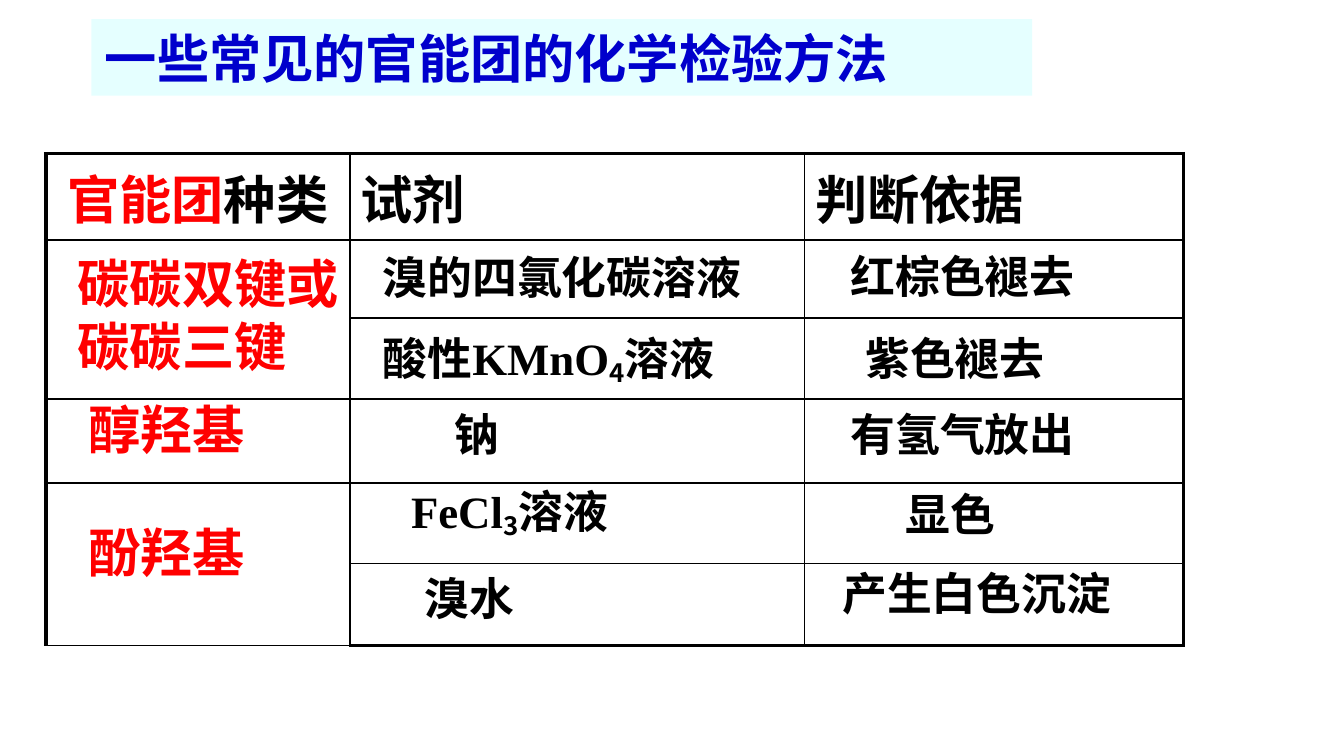
import pptx
import pptx.dml.color
import pptx.enum.text
import pptx.oxml
import pptx.oxml.ns
import pptx.util
from dataclasses import dataclass

Pt = pptx.util.Pt


@dataclass(frozen=True)
class Theme:
    black: str = "000000"
    red: str = "FF0000"
    blue: str = "0000CC"
    banner: str = "E5FFFF"
    large: int = 28
    medium: int = 24
    serif: str = "Times New Roman"
    sans: str = "Calibri"
    chinese: str = "Noto Sans CJK SC"
    outer_line: float = 2.25
    inner_line: float = 1


theme = Theme()


def format_run(run, size, color, font=theme.serif):
    run.font.size = Pt(size)
    run.font.bold = True
    run.font.name = font
    run.font.color.rgb = pptx.dml.color.RGBColor.from_string(color)
    east_asian = pptx.oxml.parse_xml(
        f'<a:ea {pptx.oxml.ns.nsdecls("a")} typeface="{theme.chinese}"/>')
    run.font._element.find(pptx.oxml.ns.qn("a:latin")).addnext(east_asian)


def set_border(cell, side, width):
    """Add one edge line; call in the order L, R, T, B and before the fill."""
    cell._tc.get_or_add_tcPr().append(pptx.oxml.parse_xml(
        f'<a:ln{side} {pptx.oxml.ns.nsdecls("a")} w="{Pt(width)}"><a:solidFill>'
        f'<a:srgbClr val="{theme.black}"/></a:solidFill></a:ln{side}>'))


presentation = pptx.Presentation()
presentation.slide_width, presentation.slide_height = Pt(720), Pt(405)
slide = presentation.slides.add_slide(presentation.slide_layouts[5])

# Title banner
title = slide.shapes.title
title.left, title.top, title.width, title.height = Pt(49), Pt(10.2), Pt(504), Pt(41)
title.fill.solid()
title.fill.fore_color.rgb = pptx.dml.color.RGBColor.from_string(theme.banner)
title.text_frame.text = "一些常见的官能团的化学检验方法"
title.text_frame.auto_size = pptx.enum.text.MSO_AUTO_SIZE.NONE
title.text_frame.vertical_anchor = pptx.enum.text.MSO_ANCHOR.TOP
title.text_frame.paragraphs[0].alignment = pptx.enum.text.PP_ALIGN.LEFT
format_run(title.text_frame.paragraphs[0].runs[0], theme.large, theme.blue)

# Grid of functional groups, reagents and evidence
column_widths = [163, 243.5, 203]
row_heights = [39, 42, 43.2, 45, 43.2, 44]
last_row, last_column = len(row_heights) - 1, len(column_widths) - 1
grid = slide.shapes.add_table(
    len(row_heights), len(column_widths), Pt(24.5), Pt(82.3),
    Pt(sum(column_widths)), Pt(sum(row_heights))).table
grid.first_row = grid.horz_banding = False
for column, width in zip(grid.columns, column_widths):
    column.width = Pt(width)
for row, height in zip(grid.rows, row_heights):
    row.height = Pt(height)

for r in range(last_row + 1):
    for c in range(last_column + 1):
        cell = grid.cell(r, c)
        outer_sides = {"L": c == 0, "R": c == last_column, "T": r == 0, "B": r == last_row}
        for side, is_outer in outer_sides.items():
            set_border(cell, side, theme.outer_line if is_outer else theme.inner_line)
        cell.fill.background()
        cell.margin_left = cell.margin_right = Pt(5.76)
        cell.margin_top = cell.margin_bottom = Pt(2.88)
for first in (1, 4):
    grid.cell(first, 0).merge(grid.cell(first + 1, 0))

headings = [
    [("官能团", theme.red), ("种类", theme.black)],
    [("试剂", theme.black)],
    [("判断依据", theme.black)],
]
for c, parts in enumerate(headings):
    paragraph = grid.cell(0, c).text_frame.paragraphs[0]
    for text, color in parts:
        run = paragraph.add_run()
        run.text = text
        format_run(run, theme.large, color, theme.sans)
grid.cell(0, 0).text_frame.paragraphs[0].alignment = pptx.enum.text.PP_ALIGN.CENTER

# Entries: left, top, width, lines; each line is a list of parts, digits are subscripts
groups = [
    (34.6, 131, 172.8, [["碳碳双键或"], ["碳碳三键"]]),
    (40.3, 209.5, 114.5, [["醇羟基"]]),
    (40.3, 275, 114.5, [["酚羟基"]]),
]
reagents = [
    (198, 130.3, 223.2, [["溴的四氯化碳溶液"]]),
    (198, 173.5, 238.3, [["酸性KMnO", "4", "溶液"]]),
    (236.2, 214.6, 96.5, [["钠"]]),
    (213.1, 255.6, 174.2, [["FeCl", "3", "溶液"]]),
    (220.3, 302.4, 77, [["溴水"]]),
]
evidence = [
    (448.6, 129.6, 141.1, [["红棕色褪去"]]),
    (456.5, 173.5, 115.9, [["紫色褪去"]]),
    (448.6, 214.6, 141.1, [["有氢气放出"]]),
    (478.1, 257, 65.5, [["显色"]]),
    (444.2, 299.5, 166.3, [["产生白色沉淀"]]),
]
for entries, size, color, line_height in (
        (groups, theme.large, theme.red, 34),
        (reagents + evidence, theme.medium, theme.black, 29)):
    for left, top, width, lines in entries:
        frame = slide.shapes.add_textbox(
            Pt(left), Pt(top), Pt(width), Pt(line_height * len(lines) + 7)).text_frame
        frame.word_wrap = True
        frame.auto_size = pptx.enum.text.MSO_AUTO_SIZE.SHAPE_TO_FIT_TEXT
        for number, parts in enumerate(lines):
            paragraph = frame.add_paragraph() if number else frame.paragraphs[0]
            for part in parts:
                run = paragraph.add_run()
                run.text = part
                is_subscript = part.isdigit()
                format_run(run, size, color, theme.chinese if is_subscript else theme.serif)
                if is_subscript:
                    run.font._element.set("baseline", "-16000")

presentation.save("out.pptx")
